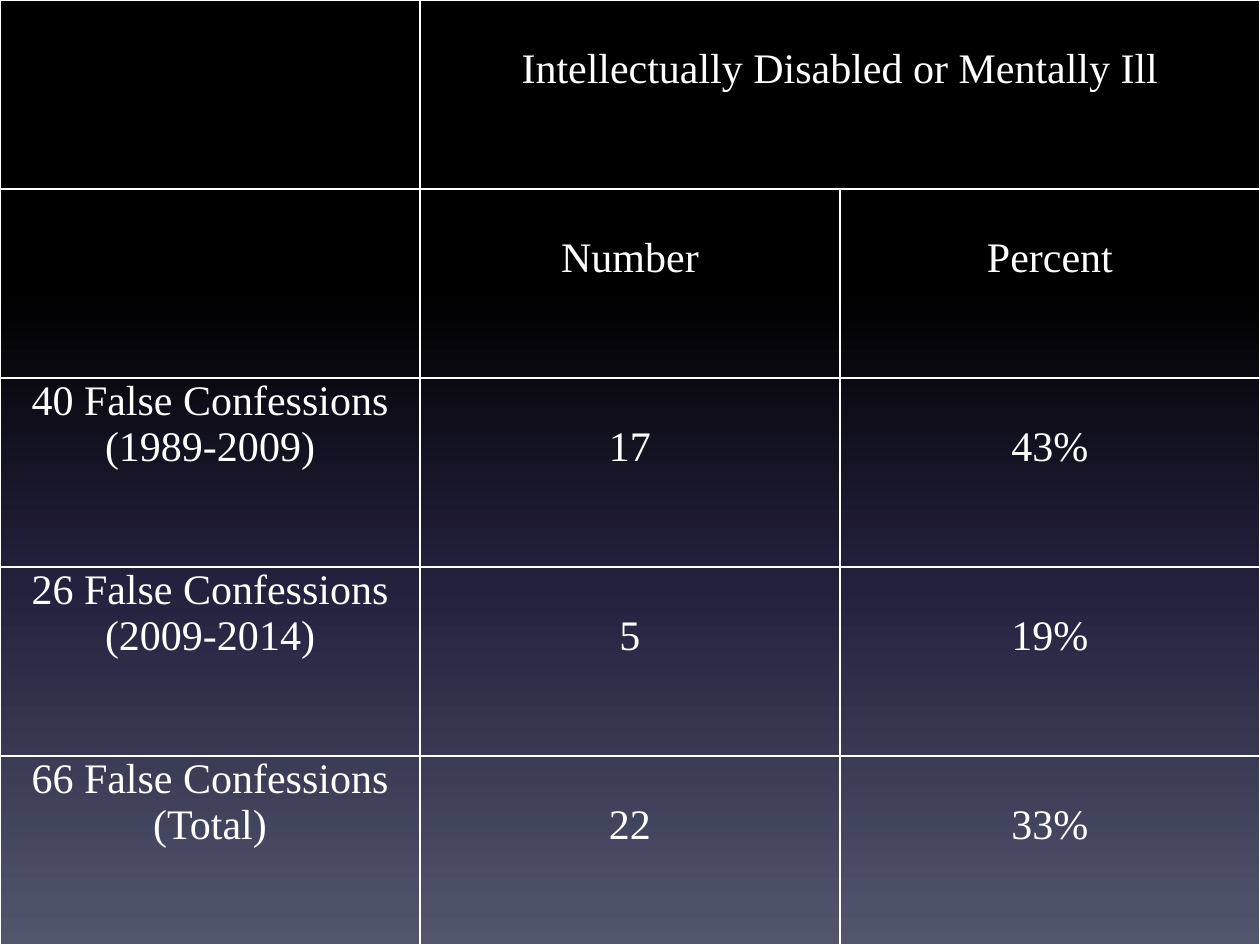
from copy import deepcopy
from dataclasses import dataclass

from lxml import etree
from pptx import Presentation
from pptx.dml.color import RGBColor
from pptx.enum.text import PP_ALIGN
from pptx.oxml.ns import qn
from pptx.util import Inches, Pt

CENTER = PP_ALIGN.CENTER
BLANK_LAYOUT = 6
BORDER_TAGS = ("a:lnL", "a:lnR", "a:lnT", "a:lnB")


@dataclass(frozen=True)
class Theme:
    font: str = "Times New Roman"
    size: float = 24
    text: str = "FFFFFF"
    border: str = "FFFFFF"
    border_width: float = 1
    side_margin: float = 0.07
    value_drop: float = 0.37  # one line of text, in inches
    background: tuple = ((0, "000000"), (0.31, "000000"),
                         (0.62, "24213E"), (1, "51566D"))


THEME = Theme()

ROWS = (
    ("", "Intellectually Disabled or Mentally Ill", ""),
    ("", "Number", "Percent"),
    ("40 False Confessions (1989-2009)", "17", "43%"),
    ("26 False Confessions (2009-2014)", "5", "19%"),
    ("66 False Confessions (Total)", "22", "33%"),
)


def paint_background(page):
    """Fill the page with the theme's gradient, running top to bottom."""
    fill = page.background.fill
    fill.gradient()
    fill.gradient_angle = 270
    stop_list = page.element.find(".//" + qn("a:gsLst"))
    while len(stop_list) < len(THEME.background):
        stop_list.append(deepcopy(stop_list[0]))
    for stop, (position, color) in zip(fill.gradient_stops, THEME.background):
        stop.position = position
        stop.color.rgb = RGBColor.from_string(color)


def add_borders(cell):
    properties = cell._tc.get_or_add_tcPr()
    for tag in BORDER_TAGS:
        line = etree.SubElement(properties, qn(tag),
                                w=str(Pt(THEME.border_width)))
        solid = etree.SubElement(line, qn("a:solidFill"))
        etree.SubElement(solid, qn("a:srgbClr"), val=THEME.border)


def write_text(cell, text, *, size=THEME.size, color=THEME.text,
               align=CENTER, drop=0):
    """Write one paragraph, starting drop inches below the cell's top."""
    cell.margin_left = cell.margin_right = Inches(THEME.side_margin)
    cell.margin_top, cell.margin_bottom = Inches(drop), 0
    para = cell.text_frame.paragraphs[0]
    para.alignment = align
    para.font.size = Pt(size)
    if text:
        span = para.add_run()
        span.text = text
        span.font.name = THEME.font
        span.font.size = Pt(size)
        span.font.color.rgb = RGBColor.from_string(color)


def add_full_page_table(page, rows, width, height):
    frame = page.shapes.add_table(len(rows), len(rows[0]), 0, 0, width, height)
    table = frame.table
    table.first_row = table.horz_banding = False
    for row_index, row in enumerate(rows):
        for column_index, text in enumerate(row):
            cell = table.cell(row_index, column_index)
            add_borders(cell)
            cell.fill.background()
            write_text(cell, text,
                       drop=THEME.value_drop if column_index else 0)
    table.cell(0, 1).merge(table.cell(0, 2))


def main():
    deck = Presentation()
    deck.slide_width, deck.slide_height = Inches(10), Inches(7.5)
    page = deck.slides.add_slide(deck.slide_layouts[BLANK_LAYOUT])
    paint_background(page)
    add_full_page_table(page, ROWS, deck.slide_width, deck.slide_height)
    deck.save("out.pptx")


if __name__ == "__main__":
    main()
